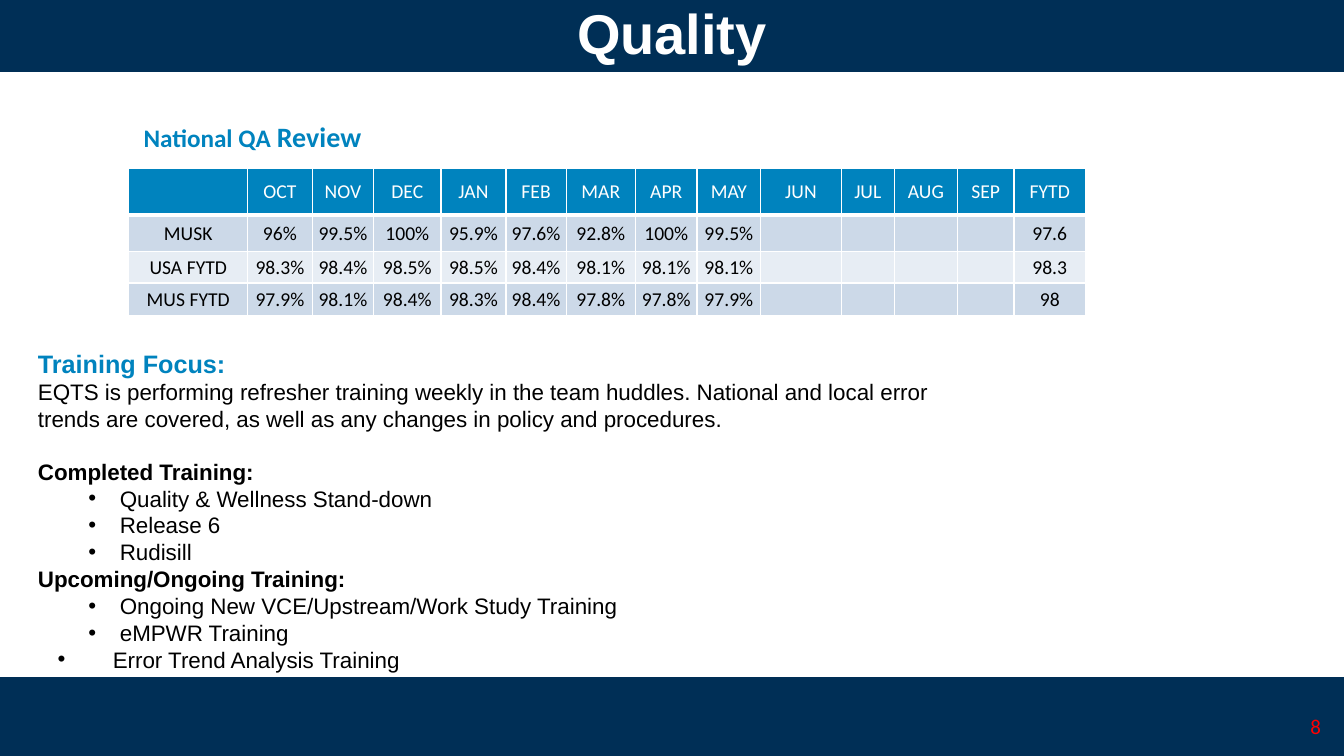
import dataclasses

import lxml.etree
import pptx
import pptx.dml.color
import pptx.enum.shapes
import pptx.enum.text
import pptx.oxml.ns
import pptx.util

Pt = pptx.util.Pt
ALIGN = pptx.enum.text.PP_ALIGN
ANCHOR = pptx.enum.text.MSO_ANCHOR


@dataclasses.dataclass(frozen=True)
class Theme:
    navy: str = "002F56"
    blue: str = "0083BE"
    white: str = "FFFFFF"
    black: str = "000000"
    red: str = "FF0000"
    stripes: tuple = ("CCD9E8", "E7EDF4")
    heading_font: str = "Arial"
    table_font: str = "Calibri"
    title: int = 40
    label: int = 20
    heading: int = 18
    body: int = 16
    number: int = 15
    cell: int = 14


def colour(code):
    return pptx.dml.color.RGBColor.from_string(code)


def add_element(parent, tag, **attributes):
    return lxml.etree.SubElement(parent, pptx.oxml.ns.qn(tag), **attributes)


def style(target, size, code, name, bold=False):
    """Format the font of a paragraph or a run."""
    font = target.font
    font.size, font.name, font.bold = Pt(size), name, bold
    font.color.rgb = colour(code)


class SlideBuilder:
    def __init__(self, page, theme):
        self.page, self.theme = page, theme

    def place(self, shape, area):
        shape.left, shape.top, shape.width, shape.height = map(Pt, area)

    def band(self, area):
        band = self.page.shapes.add_shape(
            pptx.enum.shapes.MSO_SHAPE.RECTANGLE, *map(Pt, area))
        band.shadow.inherit = False
        band.fill.solid()
        band.fill.fore_color.rgb = colour(self.theme.navy)
        band.line.fill.background()
        return band

    def title(self, text, area, behind):
        title = self.page.shapes.title
        behind.element.addnext(title.element)
        self.place(title, area)
        frame = title.text_frame
        frame.text, frame.vertical_anchor = text, ANCHOR.MIDDLE
        para = frame.paragraphs[0]
        para.alignment = ALIGN.CENTER
        style(para, self.theme.title, self.theme.white, self.theme.heading_font, True)

    def text_box(self, area):
        frame = self.page.shapes.add_textbox(*map(Pt, area)).text_frame
        frame.word_wrap = True
        return frame

    def table_label(self, spans, area):
        """Add a centred label from (text, size) spans."""
        para = self.text_box(area).paragraphs[0]
        para.alignment = ALIGN.CENTER
        for text, size in spans:
            span = para.add_run()
            span.text = text
            style(span, size, self.theme.blue, self.theme.table_font, True)

    def page_number(self, text, area):
        frame = self.text_box(area)
        frame.vertical_anchor = ANCHOR.MIDDLE
        frame.margin_left = frame.margin_right = Pt(9)
        para = frame.paragraphs[0]
        para.text, para.alignment = text, ALIGN.RIGHT
        style(para, self.theme.number, self.theme.red, self.theme.table_font)

    def training_notes(self, notes, area):
        """Add (kind, text) paragraphs, each formatted by its kind."""
        theme = self.theme
        indents = {"bullet": (58.5, -22.5), "wide bullet": (53.5, -39.5)}
        frame = self.text_box(area)
        for index, (kind, text) in enumerate(notes):
            para = frame.add_paragraph() if index else frame.paragraphs[0]
            para.text = text
            if kind in indents:
                margin, indent = indents[kind]
                properties = para._p.get_or_add_pPr()
                properties.set("marL", str(Pt(margin)))
                properties.set("indent", str(Pt(indent)))
                add_element(properties, "a:buFont", typeface=theme.heading_font)
                add_element(properties, "a:buChar", char="•")
            if kind == "first section":
                para.space_before = Pt(18.5)
            if kind == "heading":
                style(para, theme.heading, theme.blue, theme.heading_font, True)
            else:
                style(para, theme.body, theme.black, theme.heading_font, "section" in kind)

    def borders(self, cell, bottom):
        properties = cell._tc.get_or_add_tcPr()
        for side, width in zip("LRTB", (1, 1, 1, bottom)):
            line = add_element(properties, f"a:ln{side}", w=str(Pt(width)))
            fill = add_element(line, "a:solidFill")
            add_element(fill, "a:srgbClr", val=self.theme.white)

    def table(self, rows, origin, widths, heights):
        theme = self.theme
        table = self.page.shapes.add_table(
            len(rows), len(widths), *map(Pt, (*origin, sum(widths), sum(heights)))).table
        for column, width in zip(table.columns, widths):
            column.width = Pt(width)
        for number, (row, height, values) in enumerate(zip(table.rows, heights, rows)):
            row.height = Pt(height)
            header = number == 0
            for cell, value in zip(row.cells, values):
                self.borders(cell, 3 if header else 1)
                cell.fill.solid()
                cell.fill.fore_color.rgb = colour(
                    theme.blue if header else theme.stripes[(number - 1) % 2])
                cell.vertical_anchor = ANCHOR.MIDDLE
                if not header:
                    cell.margin_left = cell.margin_right = 0
                    cell.margin_top = cell.margin_bottom = 0
                para = cell.text_frame.paragraphs[0]
                para.text, para.alignment = value, ALIGN.CENTER
                style(para, theme.cell, theme.white if header else theme.black,
                      theme.table_font)


MONTHS = "OCT NOV DEC JAN FEB MAR APR MAY JUN JUL AUG SEP".split()
SCORES = [
    ("MUSK", "96% 99.5% 100% 95.9% 97.6% 92.8% 100% 99.5%", "97.6"),
    ("USA FYTD", "98.3% 98.4% 98.5% 98.5% 98.4% 98.1% 98.1% 98.1%", "98.3"),
    ("MUS FYTD", "97.9% 98.1% 98.4% 98.3% 98.4% 97.8% 97.8% 97.9%", "98"),
]
NOTES = [
    ("heading", "Training Focus:"),
    ("body", "EQTS is performing refresher training weekly in the team huddles. "
             "National and local error trends are covered, as well as any changes "
             "in policy and procedures."),
    ("first section", "Completed Training:"),
    ("bullet", "Quality & Wellness Stand-down"),
    ("bullet", "Release 6"),
    ("bullet", "Rudisill"),
    ("section", "Upcoming/Ongoing Training:"),
    ("bullet", "Ongoing New VCE/Upstream/Work Study Training"),
    ("bullet", "eMPWR Training"),
    ("wide bullet", "Error Trend Analysis Training"),
]


def main():
    deck = pptx.Presentation()
    deck.slide_width, deck.slide_height = Pt(960), Pt(540)
    theme = Theme()
    builder = SlideBuilder(deck.slides.add_slide(deck.slide_layouts[5]), theme)

    header_area = (0, -6, 960, 57.5)
    builder.band((0, 483.75, 960, 57.5))
    header = builder.band(header_area)
    builder.title("Quality", header_area, header)
    builder.training_notes(NOTES, (20, 245, 693.5, 242.5))
    builder.page_number("8", (912, 504, 40.5, 29))

    rows = [["", *MONTHS, "FYTD"]]
    for name, scores, total in SCORES:
        months = scores.split()
        rows.append([name, *months, *[""] * (len(MONTHS) - len(months)), total])
    builder.table(rows, (92, 120.25),
                  (85, 46, 44, 48, 46.5, 43, 49.5, 44, 45.5, 57.5, 38, 45, 40.5, 51),
                  (33.5, 26, 22.5, 23.5))
    builder.table_label([("National QA ", theme.heading), ("Review", theme.label)],
                        (70.5, 82, 219.5, 31.5))
    deck.save("out.pptx")


if __name__ == "__main__":
    main()
